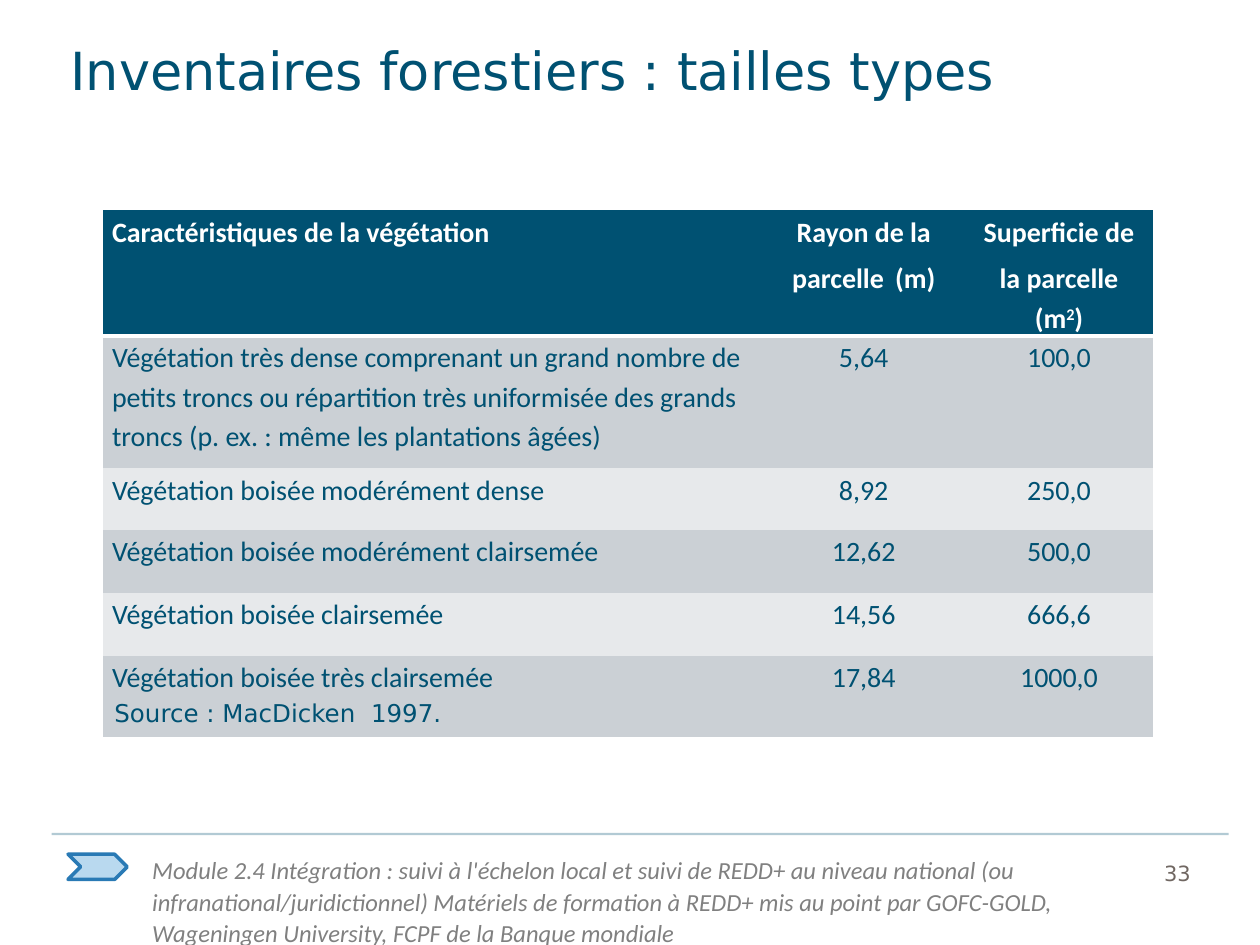
from lxml import etree
from pptx import Presentation
from pptx.dml.color import RGBColor
from pptx.enum.shapes import MSO_CONNECTOR, MSO_SHAPE
from pptx.enum.text import MSO_ANCHOR, PP_ALIGN
from pptx.oxml.ns import qn
from pptx.util import Inches, Pt

LEFT, CENTER = PP_ALIGN.LEFT, PP_ALIGN.CENTER
TOP = MSO_ANCHOR.TOP
CHEVRON = MSO_SHAPE.CHEVRON
STRAIGHT = MSO_CONNECTOR.STRAIGHT
PLAIN = "{2D5ABB26-0587-4C30-8999-92F81FD0307C}"
NAVY, WHITE, DARK, PALE = "005172", "FFFFFF", "CBD0D5", "E7E9EB"

HEAD = {"name": "Calibri", "size": Pt(16), "bold": True, "color": WHITE}
BODY = {**HEAD, "bold": False, "color": NAVY}
GAP = {"name": "DejaVu Sans", "size": Pt(20), "bold": False, "color": NAVY}
TITLE = {"name": "DejaVu Sans", "size": Pt(30), "color": NAVY}
SOURCE = {**TITLE, "size": Pt(14)}
NUMBER = {**TITLE, "size": Pt(12), "color": "706762"}
FOOTER = {"name": "Calibri", "size": Pt(14), "italic": True, "color": "808080"}

COLS = [5.23, 1.61, 1.49]
ROWS = [0.47, 1.05, 0.49, 0.5, 0.5, 0.64]
HEADS = [
    [("Caractéristiques de la végétation", HEAD)],
    [("Rayon de la parcelle", HEAD), (" ", GAP), ("(m)", HEAD)],
    [("Superficie de la parcelle", HEAD), (" ", GAP), ("(m", HEAD),
     ("2", {**HEAD, "raised": True}), (")", HEAD)],
]
DATA = [
    ("Végétation très dense comprenant un grand nombre de petits troncs ou "
     "répartition très uniformisée des grands troncs "
     "(p. ex. : même les plantations âgées)", "5,64", "100,0"),
    ("Végétation boisée modérément dense", "8,92", "250,0"),
    ("Végétation boisée modérément clairsemée", "12,62", "500,0"),
    ("Végétation boisée clairsemée", "14,56", "666,6"),
    ("Végétation boisée très clairsemée", "17,84", "1000,0"),
]
NOTE = ("Module 2.4 Intégration : suivi à l'échelon local et suivi de REDD+ au "
        "niveau national (ou infranational/juridictionnel) Matériels de "
        "formation à REDD+ mis au point par GOFC-GOLD, Wageningen University, "
        "FCPF de la Banque mondiale")


def paint(fmt, color):
    if hasattr(fmt, "solid"):
        fmt.solid()
        fmt = fmt.fore_color
    fmt.rgb = RGBColor.from_string(color)


def add_run(para, text, style):
    run = para.add_run()
    run.text = text
    for key, value in style.items():
        if key == "color":
            paint(run.font.color, value)
        elif key == "raised":
            run.font._element.set("baseline", "30000")
        else:
            setattr(run.font, key, value)


def add_text(slide, box, text, style, space, inset=None):
    frame = slide.shapes.add_textbox(*map(Inches, box)).text_frame
    frame.word_wrap = True
    frame.vertical_anchor = TOP
    for side, size in (inset or {}).items():
        setattr(frame, "margin_" + side, Inches(size))
    para = frame.paragraphs[0]
    para.line_spacing = Pt(space)
    add_run(para, text, style)


def add_rule(slide, x, y, end):
    line = slide.shapes.add_connector(
        STRAIGHT, Inches(x), Inches(y), Inches(end), Inches(y))
    line.line.width = Pt(1.25)
    paint(line.line.fill, NAVY)
    props = line._element.spPr
    color = props.find(".//" + qn("a:srgbClr"))
    etree.SubElement(color, qn("a:alpha"), val="30000")
    etree.SubElement(props, qn("a:effectLst"))


def add_arrow(slide, box):
    arrow = slide.shapes.add_shape(CHEVRON, *map(Inches, box))
    arrow.shadow.inherit = False
    paint(arrow.fill, "B9D9EF")
    paint(arrow.line.fill, "297AB5")
    arrow.line.width = Pt(2)
    etree.SubElement(arrow.line._get_or_add_ln(), qn("a:round"))


def add_edge(cell):
    props = cell._tc.get_or_add_tcPr()
    edge = etree.Element(qn("a:lnB"), w=str(Pt(2)))
    fill = etree.SubElement(edge, qn("a:solidFill"))
    etree.SubElement(fill, qn("a:srgbClr"), val=WHITE)
    props.insert(0, edge)


def fill_cell(cell, runs, align, color):
    paint(cell.fill, color)
    for side, size in zip(("left", "right", "top", "bottom"), (0.07, 0.07, 0, 0)):
        setattr(cell, "margin_" + side, Inches(size))
    para = cell.text_frame.paragraphs[0]
    para.alignment = align
    para.line_spacing = 1.15
    for text, style in runs:
        add_run(para, text, style)


def add_grid(slide):
    table = slide.shapes.add_table(
        len(ROWS), len(COLS), Inches(0.82), Inches(1.67),
        Inches(sum(COLS)), Inches(sum(ROWS))).table
    table._tbl.tblPr.find(qn("a:tableStyleId")).text = PLAIN
    table.horz_banding = False
    for col, width in zip(table.columns, COLS):
        col.width = Inches(width)
    for row, height in zip(table.rows, ROWS):
        row.height = Inches(height)
    lines = [HEADS] + [[[(text, BODY)] for text in row] for row in DATA]
    for r, line in enumerate(lines):
        color = NAVY if r == 0 else DARK if r % 2 else PALE
        for c, runs in enumerate(line):
            cell = table.cell(r, c)
            fill_cell(cell, runs, CENTER if c else LEFT, color)
            if r == 0:
                add_edge(cell)


def main():
    deck = Presentation()
    deck.slide_width, deck.slide_height = Inches(10), Inches(7.5)
    slide = deck.slides.add_slide(deck.slide_layouts[6])
    add_text(slide, (1.11, 6.72, 7.73, 0.85), NOTE, FOOTER, 18)
    add_arrow(slide, (0.54, 6.78, 0.47, 0.2))
    add_text(slide, (9.14, 6.73, 0.61, 0.33), "33", NUMBER, 18)
    add_rule(slide, 0.41, 6.62, 9.75)
    add_grid(slide)
    add_text(slide, (0.54, 0.25, 9.23, 0.87),
             "Inventaires forestiers : tailles types", TITLE, 40,
             {"left": 0.02, "top": 0, "bottom": 0.35})
    add_text(slide, (0.81, 5.47, 2.9, 0.35),
             "Source : MacDicken  1997.", SOURCE, 18)
    deck.save("out.pptx")


if __name__ == "__main__":
    main()
